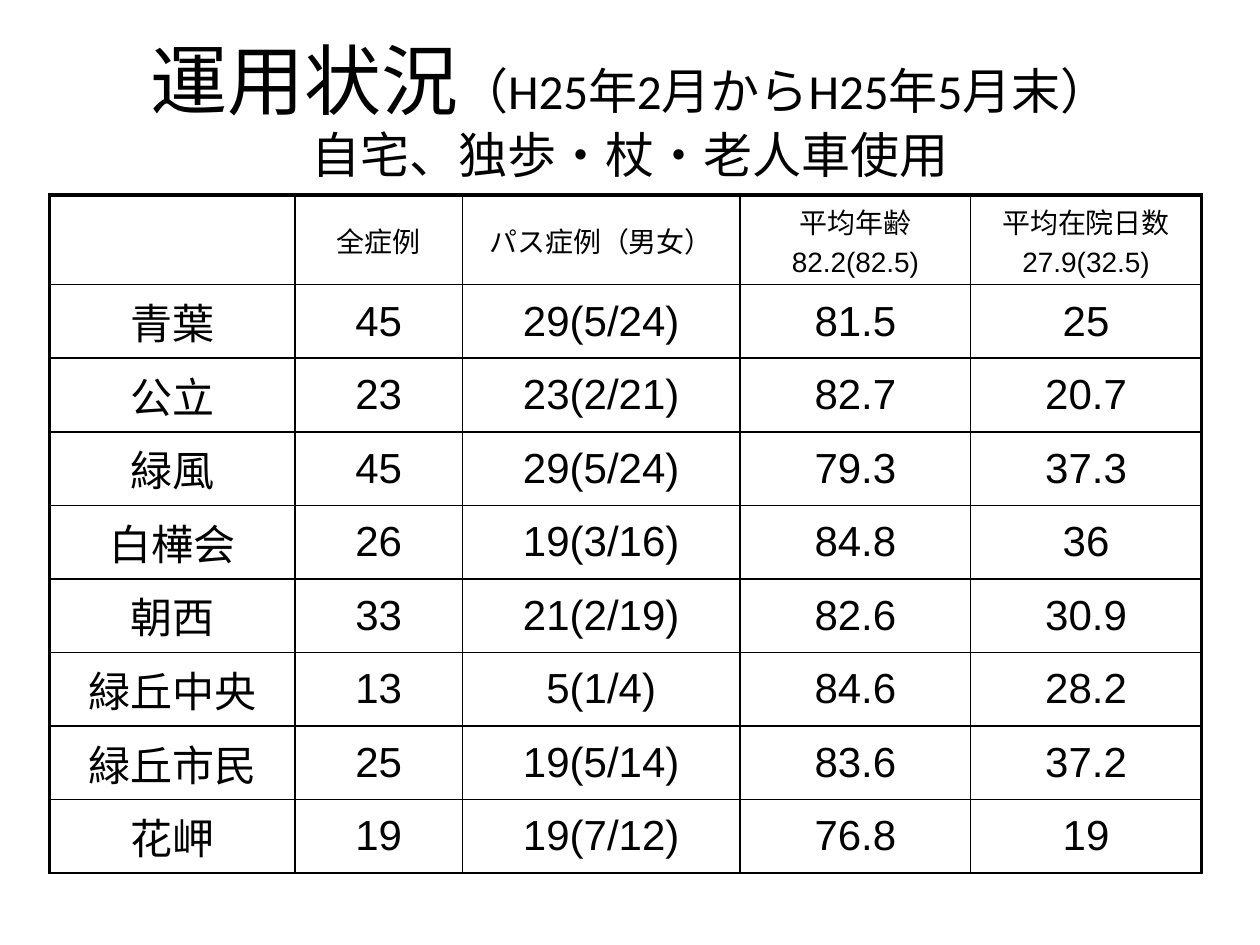
"""Build a slide with the operating results of each hospital."""
from lxml import etree
from pptx import Presentation, util as u
from pptx.dml import color
from pptx.enum import text
from pptx.oxml import ns

BLACK = color.RGBColor(0x00, 0x00, 0x00)
COLUMN_WIDTHS = (4.95, 3.37, 5.6, 4.65, 4.65)
HEADER_HEIGHT, ROW_HEIGHT = 1.8, 1.48
HEADER = ("", "全症例", "パス症例（男女）", "平均年齢\n82.2(82.5)", "平均在院日数\n27.9(32.5)")
RESULTS = (
    ("青葉", "45", "29(5/24)", "81.5", "25"),
    ("公立", "23", "23(2/21)", "82.7", "20.7"),
    ("緑風", "45", "29(5/24)", "79.3", "37.3"),
    ("白樺会", "26", "19(3/16)", "84.8", "36"),
    ("朝西", "33", "21(2/19)", "82.6", "30.9"),
    ("緑丘中央", "13", "5(1/4)", "84.6", "28.2"),
    ("緑丘市民", "25", "19(5/14)", "83.6", "37.2"),
    ("花岬", "19", "19(7/12)", "76.8", "19"),
)


def add_text(paragraph, words, *, size, font, colour=BLACK, space_before=0):
    paragraph.alignment = text.PP_ALIGN.CENTER
    paragraph.space_before = u.Pt(space_before)
    run = paragraph.add_run()
    run.text = words
    run.font.size = u.Pt(size)
    run.font.name = font
    run.font.color.rgb = colour


class SlideBuilder:
    title_font = "Calibri"
    table_font = "Arial"
    outer_line, inner_line = 2.25, 1

    def __init__(self, presentation):
        self.slide = presentation.slides.add_slide(presentation.slide_layouts[5])

    def title(self, heading, period, condition, *, left, top, width, height):
        shape = self.slide.shapes.title
        shape.left, shape.top = u.Cm(left), u.Cm(top)
        shape.width, shape.height = u.Cm(width), u.Cm(height)
        frame = shape.text_frame
        frame.auto_size = text.MSO_AUTO_SIZE.NONE
        frame.vertical_anchor = text.MSO_ANCHOR.MIDDLE
        paragraph = frame.paragraphs[0]
        add_text(paragraph, heading, size=44, font=self.title_font)
        add_text(paragraph, period, size=28, font=self.title_font)
        paragraph.add_line_break()
        add_text(paragraph, condition, size=28, font=self.title_font)

    def table(self, rows, *, left, top):
        heights = [HEADER_HEIGHT] + [ROW_HEIGHT] * (len(rows) - 1)
        table = self.slide.shapes.add_table(
            len(rows), len(COLUMN_WIDTHS), u.Cm(left), u.Cm(top),
            u.Cm(sum(COLUMN_WIDTHS)), u.Cm(sum(heights))).table
        table.first_row = table.horz_banding = False
        for column, width in zip(table.columns, COLUMN_WIDTHS):
            column.width = u.Cm(width)
        last_column = len(COLUMN_WIDTHS) - 1
        for row_index, (words_in_row, height) in enumerate(zip(rows, heights)):
            table.rows[row_index].height = u.Cm(height)
            for column_index, words in enumerate(words_in_row):
                cell = table.cell(row_index, column_index)
                outer = {"L": column_index == 0, "R": column_index == last_column,
                         "T": row_index == 0, "B": False}
                self.borders(cell, outer)
                cell.fill.background()
                self.cell_text(cell, words, size=24 if row_index else 16)

    def cell_text(self, cell, words, *, size):
        cell.vertical_anchor = text.MSO_ANCHOR.MIDDLE
        for index, line in enumerate(words.split("\n") if words else ()):
            frame = cell.text_frame
            paragraph = frame.add_paragraph() if index else frame.paragraphs[0]
            add_text(paragraph, line, size=size, font=self.table_font, space_before=size * 0.2)

    def borders(self, cell, outer):
        properties = cell._tc.get_or_add_tcPr()
        for side, is_outer in outer.items():
            width = self.outer_line if is_outer else self.inner_line
            line = etree.SubElement(properties, ns.qn(f"a:ln{side}"), w=str(u.Pt(width)))
            fill = etree.SubElement(line, ns.qn("a:solidFill"))
            etree.SubElement(fill, ns.qn("a:srgbClr"), val=str(BLACK))


def main():
    presentation = Presentation()
    presentation.slide_width, presentation.slide_height = u.Cm(25.4), u.Cm(19.05)
    builder = SlideBuilder(presentation)
    builder.title("運用状況", "（H25年2月からH25年5月末）", "自宅、独歩・杖・老人車使用",
                  left=1.27, top=0.58, width=22.86, height=3.18)
    builder.table((HEADER, *RESULTS), left=1, top=3.93)
    presentation.save("out.pptx")


if __name__ == "__main__":
    main()
